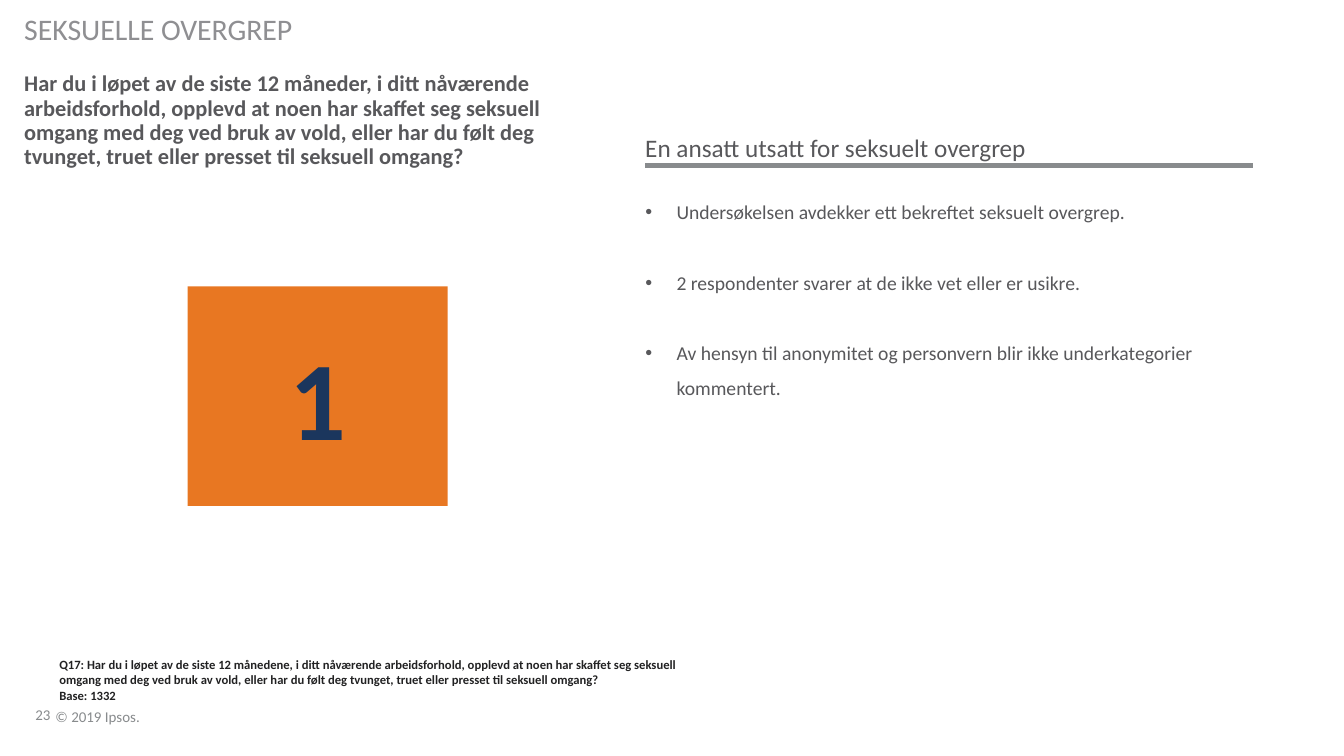
from dataclasses import dataclass

from lxml import etree
from pptx import Presentation
from pptx.dml.color import RGBColor
from pptx.enum.shapes import MSO_CONNECTOR, MSO_SHAPE
from pptx.enum.text import MSO_ANCHOR, MSO_AUTO_SIZE, PP_ALIGN
from pptx.oxml.ns import qn
from pptx.shapes.base import BaseShape
from pptx.slide import Slide
from pptx.util import Emu, Pt

TOP, MIDDLE, BOTTOM = MSO_ANCHOR.TOP, MSO_ANCHOR.MIDDLE, MSO_ANCHOR.BOTTOM
LEFT, CENTER = PP_ALIGN.LEFT, PP_ALIGN.CENTER
NO_AUTO_SIZE = MSO_AUTO_SIZE.NONE
RECTANGLE = MSO_SHAPE.RECTANGLE
STRAIGHT = MSO_CONNECTOR.STRAIGHT

EMU_PER_PX = 9144


@dataclass(frozen=True)
class Theme:
    font: str = "Calibri"
    text: str = "58585B"
    label: str = "8F8F92"
    muted: str = "888B8D"
    note: str = "222223"
    orange: str = "E87722"
    navy: str = "1B365D"
    label_size: float = 21.3
    title_size: float = 16
    heading_size: float = 18
    list_size: float = 14
    note_size: float = 9
    footer_size: float = 10.7
    figure_size: float = 80
    rule_width: float = 3.5
    list_gap: float = 25


@dataclass(frozen=True)
class Box:
    left: int
    top: int
    width: int
    height: int


@dataclass(frozen=True)
class TextStyle:
    size: float
    color: str
    bold: bool = False
    line_spacing: float = 1.0
    anchor: MSO_ANCHOR = TOP
    align: PP_ALIGN = LEFT
    margin_x: int = 0
    margin_y: int = 0


@dataclass(frozen=True)
class Label:
    text: str
    box: Box
    style: TextStyle


THEME = Theme()
FOOTER = TextStyle(THEME.footer_size, THEME.muted, line_spacing=0.85, anchor=BOTTOM)
TITLE = TextStyle(THEME.title_size, THEME.text, bold=True, line_spacing=0.9)
LIST = TextStyle(THEME.list_size, THEME.text, line_spacing=1.5)
FIGURE = TextStyle(THEME.figure_size, THEME.navy, bold=True, anchor=MIDDLE, align=CENTER)

QUESTION = (
    "Har du i løpet av de siste 12 måneder, i ditt nåværende arbeidsforhold, "
    "opplevd at noen har skaffet seg seksuell omgang med deg ved bruk av vold, "
    "eller har du følt deg tvunget, truet eller presset til seksuell omgang?"
)
SOURCE_NOTE = (
    "Q17: Har du i løpet av de siste 12 månedene, i ditt nåværende arbeidsforhold, "
    "opplevd at noen har skaffet seg seksuell omgang med deg ved bruk av vold, "
    "eller har du følt deg tvunget, truet eller presset til seksuell omgang?\n"
    "Base: 1332"
)
FINDINGS = (
    "Undersøkelsen avdekker ett bekreftet seksuelt overgrep.",
    "2 respondenter svarer at de ikke vet eller er usikre.",
    "Av hensyn til anonymitet og personvern blir ikke underkategorier kommentert.",
)
LABELS = (
    Label("SEKSUELLE OVERGREP", Box(24, 7, 981, 47),
          TextStyle(THEME.label_size, THEME.label, line_spacing=0.9, anchor=MIDDLE)),
    Label("En ansatt utsatt for seksuelt overgrep", Box(640, 131, 603, 37),
          TextStyle(THEME.heading_size, THEME.text)),
    Label(SOURCE_NOTE, Box(49, 647, 667, 56),
          TextStyle(THEME.note_size, THEME.note, bold=True, margin_x=10, margin_y=5)),
    Label("23", Box(35, 683, 45, 35), FOOTER),
    Label("© 2019 Ipsos.", Box(55, 695, 101, 25), FOOTER),
)


def px(value: int) -> Emu:
    return Emu(value * EMU_PER_PX)


def place(shape: BaseShape, box: Box) -> None:
    shape.left, shape.top = px(box.left), px(box.top)
    shape.width, shape.height = px(box.width), px(box.height)


def write_text(shape: BaseShape, text: str, style: TextStyle) -> None:
    frame = shape.text_frame
    frame.text = text
    frame.word_wrap = True
    frame.auto_size = NO_AUTO_SIZE
    frame.vertical_anchor = style.anchor
    frame.margin_left = frame.margin_right = px(style.margin_x)
    frame.margin_top = frame.margin_bottom = px(style.margin_y)
    for paragraph in frame.paragraphs:
        paragraph.alignment = style.align
        paragraph.line_spacing = style.line_spacing
        paragraph.space_before = Pt(0)
        for run in paragraph.runs:
            run.font.name = THEME.font
            run.font.size = Pt(style.size)
            run.font.bold = style.bold
            run.font.color.rgb = RGBColor.from_string(style.color)


def add_label(slide: Slide, label: Label) -> None:
    box = label.box
    shape = slide.shapes.add_textbox(px(box.left), px(box.top), px(box.width), px(box.height))
    write_text(shape, label.text, label.style)


def fill_list(shape: BaseShape, items: tuple[str, ...], box: Box, indent: int) -> None:
    place(shape, box)
    write_text(shape, "\n".join(items), LIST)
    for index, paragraph in enumerate(shape.text_frame.paragraphs):
        paragraph.space_before = Pt(THEME.list_gap if index else 0)
        properties = paragraph._p.get_or_add_pPr()
        properties.set("marL", str(px(indent)))
        properties.set("indent", str(-px(indent)))
        etree.SubElement(properties, qn("a:buFont")).set("typeface", "Arial")
        etree.SubElement(properties, qn("a:buChar")).set("char", "•")


def add_figure(slide: Slide, text: str, box: Box) -> None:
    shape = slide.shapes.add_shape(
        RECTANGLE, px(box.left), px(box.top), px(box.width), px(box.height))
    shape.shadow.inherit = False
    shape.fill.solid()
    shape.fill.fore_color.rgb = RGBColor.from_string(THEME.orange)
    shape.line.fill.background()
    write_text(shape, text, FIGURE)


def add_rule(slide: Slide, left: int, right: int, top: int) -> None:
    rule = slide.shapes.add_connector(STRAIGHT, px(left), px(top), px(right), px(top))
    rule.line.color.rgb = RGBColor.from_string(THEME.muted)
    rule.line.width = Pt(THEME.rule_width)
    etree.SubElement(rule._element.spPr, qn("a:effectLst"))


def main() -> None:
    presentation = Presentation()
    presentation.slide_width, presentation.slide_height = px(1333), px(750)
    slide = presentation.slides.add_slide(presentation.slide_layouts[1])

    title = slide.shapes.title
    place(title, Box(24, 72, 587, 97))
    write_text(title, QUESTION, TITLE)
    fill_list(slide.placeholders[1], FINDINGS, Box(640, 187, 604, 432), indent=31)

    add_figure(slide, "1", Box(186, 284, 258, 218))
    for label in LABELS:
        add_label(slide, label)
    add_rule(slide, left=640, right=1243, top=164)

    presentation.save("out.pptx")


if __name__ == "__main__":
    main()
